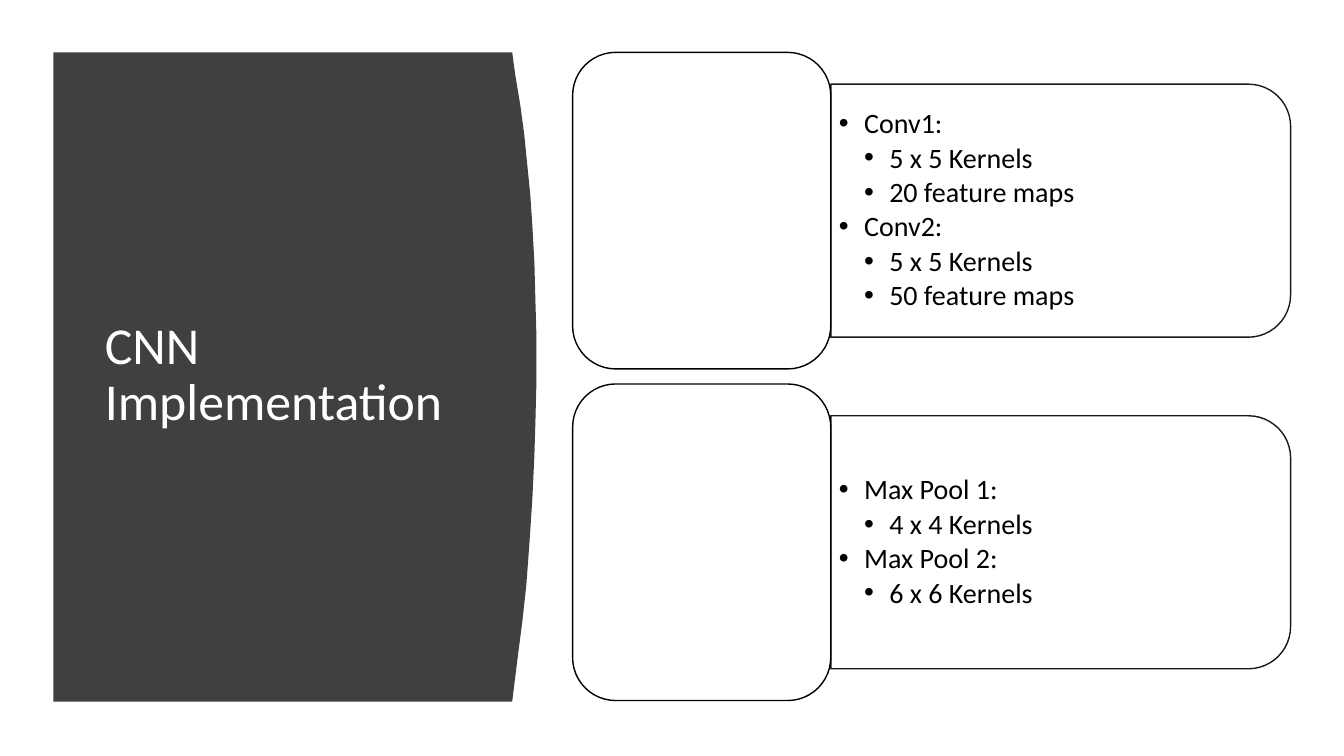
from dataclasses import dataclass

from lxml.etree import SubElement
from pptx import Presentation
from pptx.dml.color import RGBColor
from pptx.enum.shapes import MSO_SHAPE
from pptx.enum.text import MSO_ANCHOR, MSO_AUTO_SIZE, PP_ALIGN
from pptx.oxml.ns import qn
from pptx.shapes.autoshape import Shape
from pptx.slide import Slide
from pptx.text.text import TextFrame
from pptx.util import Inches, Pt


@dataclass(frozen=True)
class Theme:
    font: str = "Calibri"
    panel: RGBColor = RGBColor(0x40, 0x40, 0x40)
    paper: RGBColor = RGBColor(0xFF, 0xFF, 0xFF)
    ink: RGBColor = RGBColor(0, 0, 0)
    title_size: int = 37
    list_size: int = 20
    line_width: int = 1
    tab_opacity: int = 90


@dataclass(frozen=True)
class Box:
    left: float
    top: float
    width: float
    height: float


@dataclass(frozen=True)
class Layer:
    name: str
    details: tuple[str, ...]


THEME = Theme()
LAYER_GROUPS = (
    (
        Layer("Conv1:", ("5 x 5 Kernels", "20 feature maps")),
        Layer("Conv2:", ("5 x 5 Kernels", "50 feature maps")),
    ),
    (
        Layer("Max Pool 1:", ("4 x 4 Kernels",)),
        Layer("Max Pool 2:", ("6 x 6 Kernels",)),
    ),
)
PANEL_LEFT, TOP, BOTTOM = 0.53, 0.52, 6.96
PANEL_EDGE = (
    (5.08, TOP), (5.11, 0.74), (5.16, 1.04), (5.2, 1.34), (5.23, 1.64),
    (5.26, 1.94), (5.28, 2.24), (5.3, 2.6), (5.31, 2.97), (5.32, 3.32),
    (5.32, 3.8), (5.31, 4.2), (5.3, 4.52), (5.28, 4.95), (5.25, 5.4),
    (5.22, 5.81), (5.18, 6.17), (5.14, 6.48), (5.11, 6.72), (5.08, BOTTOM),
)
CARD = Box(5.68, TOP, 2.56, 3.14)
ROW_PITCH = 3.29
TAB_LENGTH, TAB_HEIGHT = 4.56, 2.51
LIST_WIDTH, LIST_HEIGHT = 4.44, 2.27
INDENT = 0.25


def place(shape: Shape, box: Box) -> None:
    shape.left, shape.top = Inches(box.left), Inches(box.top)
    shape.width, shape.height = Inches(box.width), Inches(box.height)


def bring_to_front(shape: Shape) -> None:
    shape.element.getparent().append(shape.element)


def prepare_frame(frame: TextFrame) -> None:
    frame.word_wrap = True
    frame.auto_size = MSO_AUTO_SIZE.NONE
    frame.vertical_anchor = MSO_ANCHOR.MIDDLE


def add_text(frame: TextFrame, index: int, text: str, size: int, color: RGBColor):
    """Write one left-aligned paragraph and return it."""
    paragraph = frame.paragraphs[0] if index == 0 else frame.add_paragraph()
    paragraph.alignment = PP_ALIGN.LEFT
    paragraph.line_spacing = 0.9
    paragraph.space_before = Pt(0)
    run = paragraph.add_run()
    run.text = text
    run.font.name = THEME.font
    run.font.size = Pt(size)
    run.font.color.rgb = color
    return paragraph


def add_panel(slide: Slide) -> None:
    points = [(Inches(x), Inches(y)) for x, y in (*PANEL_EDGE, (PANEL_LEFT, BOTTOM))]
    builder = slide.shapes.build_freeform(Inches(PANEL_LEFT), Inches(TOP))
    builder.add_line_segments(points, close=True)
    panel = builder.convert_to_shape()
    panel.shadow.inherit = False
    panel.fill.solid()
    panel.fill.fore_color.rgb = THEME.panel
    panel.line.fill.background()


def add_title(slide: Slide, text: str) -> None:
    title = slide.shapes.title
    place(title, Box(0.94, 1.11, 3.74, 5.24))
    prepare_frame(title.text_frame)
    add_text(title.text_frame, 0, text, THEME.title_size, THEME.paper)
    bring_to_front(title)


def add_outlined(slide: Slide, kind: MSO_SHAPE, box: Box) -> Shape:
    shape = slide.shapes.add_shape(
        kind, Inches(box.left), Inches(box.top), Inches(box.width), Inches(box.height)
    )
    shape.shadow.inherit = False
    shape.fill.solid()
    shape.fill.fore_color.rgb = THEME.paper
    shape.line.color.rgb = THEME.ink
    shape.line.width = Pt(THEME.line_width)
    return shape


def add_tab(slide: Slide, left: float, middle: float) -> None:
    """Draw the translucent tab, turned so its round corners face right."""
    box = Box(
        left + (TAB_LENGTH - TAB_HEIGHT) / 2, middle - TAB_LENGTH / 2,
        TAB_HEIGHT, TAB_LENGTH,
    )
    tab = add_outlined(slide, MSO_SHAPE.ROUND_2_SAME_RECTANGLE, box)
    tab.rotation = 90
    for color in tab.element.spPr.iter(qn("a:srgbClr")):
        SubElement(color, qn("a:alpha"), val=str(THEME.tab_opacity * 1000))


def fill_list(holder: Shape, box: Box, layers: tuple[Layer, ...]) -> None:
    place(holder, box)
    frame = holder.text_frame
    prepare_frame(frame)
    frame.margin_left = frame.margin_right = Inches(0.08)
    frame.margin_top = frame.margin_bottom = Inches(0.04)
    entries = [
        entry
        for layer in layers
        for entry in ((1, layer.name), *((2, detail) for detail in layer.details))
    ]
    for index, (level, text) in enumerate(entries):
        paragraph = add_text(frame, index, text, THEME.list_size, THEME.ink)
        paragraph.level = level
        paragraph.space_after = Pt(0.15 * THEME.list_size)
        properties = paragraph._p.get_or_add_pPr()
        properties.set("marL", str(Inches(INDENT * level)))
        properties.set("indent", str(-Inches(INDENT)))
        SubElement(properties, qn("a:buFont"), typeface="Arial")
        SubElement(properties, qn("a:buChar"), char="•")
    bring_to_front(holder)


def main() -> None:
    deck = Presentation()
    deck.slide_width, deck.slide_height = Inches(13.33), Inches(7.5)
    slide = deck.slides.add_slide(deck.slide_layouts.get_by_name("Two Content"))
    add_panel(slide)
    add_title(slide, "CNN Implementation")
    list_left = CARD.left + CARD.width
    for row, layers in enumerate(LAYER_GROUPS):
        top = CARD.top + row * ROW_PITCH
        middle = top + CARD.height / 2
        add_tab(slide, list_left, middle)
        list_box = Box(list_left, middle - LIST_HEIGHT / 2, LIST_WIDTH, LIST_HEIGHT)
        fill_list(slide.placeholders[row + 1], list_box, layers)
        card_box = Box(CARD.left, top, CARD.width, CARD.height)
        add_outlined(slide, MSO_SHAPE.ROUNDED_RECTANGLE, card_box)
    deck.save("out.pptx")


if __name__ == "__main__":
    main()
